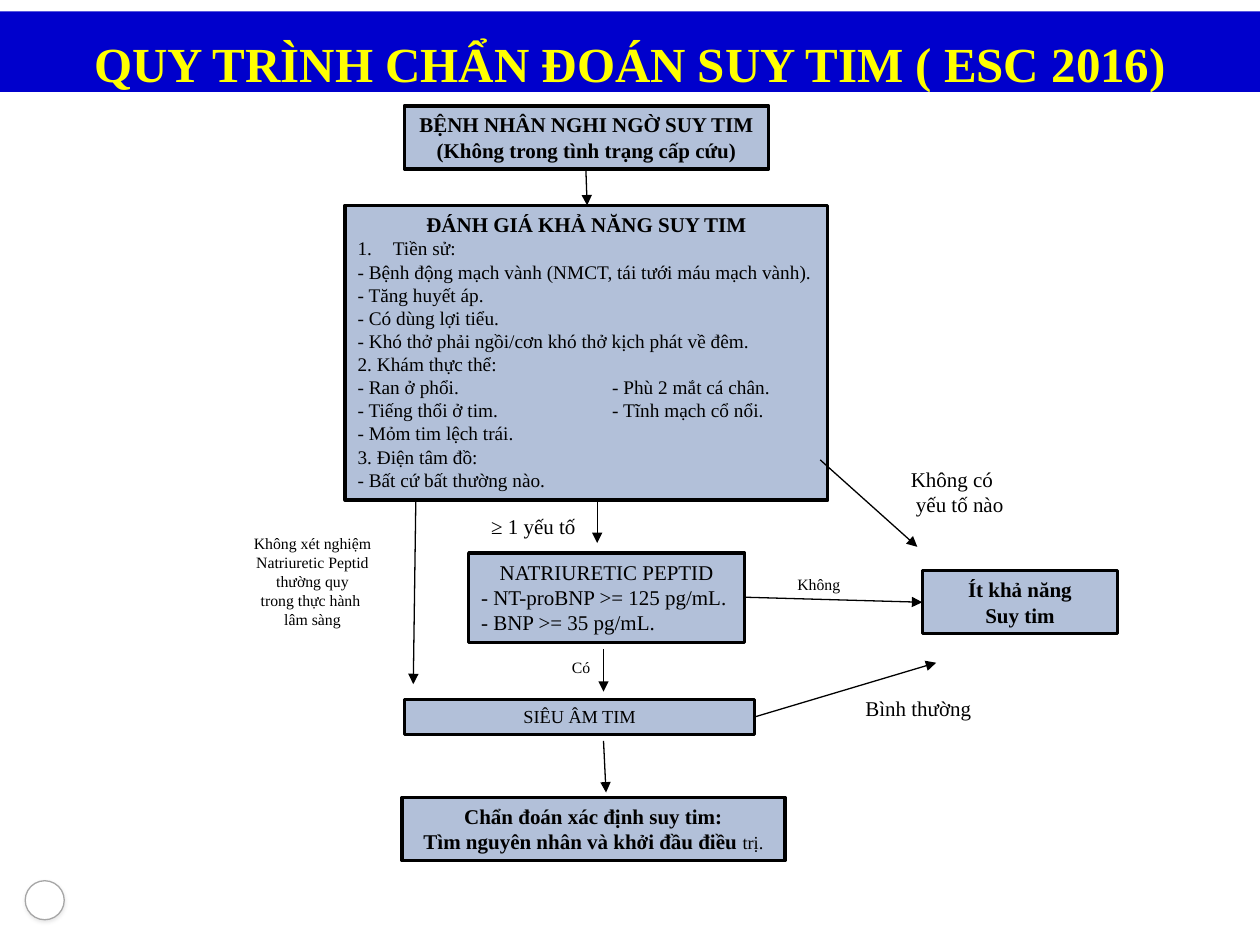
from dataclasses import dataclass

from lxml.etree import SubElement
from pptx import Presentation
from pptx.dml.color import RGBColor
from pptx.enum.shapes import MSO_CONNECTOR, MSO_SHAPE
from pptx.enum.text import MSO_ANCHOR, MSO_AUTO_SIZE, PP_ALIGN
from pptx.oxml.ns import qn
from pptx.util import Inches, Pt


@dataclass(frozen=True)
class Theme:
    font: str = "Times New Roman"
    banner: str = "0000CC"
    title: str = "FFFF00"
    box: str = "B2C0D9"
    ink: str = "000000"
    icon: str = "FFFFFF"
    icon_line: str = "A6A6A6"
    shadow: str = "474749"
    title_size: float = 28
    heading_size: float = 12
    body_size: float = 11
    step_size: float = 10.5
    note_size: float = 9


THEME = Theme()
HEAD, BODY, STEP, NOTE = (THEME.heading_size, THEME.body_size,
                          THEME.step_size, THEME.note_size)

# Content: a line is (text, format); a list of pairs makes several runs
TITLE = "QUY TRÌNH CHẨN ĐOÁN SUY TIM ( ESC 2016)"
BOLD = dict(size=HEAD, bold=True, center=True)
PLAIN = dict(size=HEAD)
DETAIL = dict(size=BODY)
COLUMNS = dict(size=BODY, tab=2.02)
CENTERED_NOTE = dict(size=NOTE, center=True)

# (left, top, width, height), wrap, lines
BOXES = [
    ((3.21, 0.84, 2.89, 0.5), False, [
        ("BỆNH NHÂN NGHI NGỜ SUY TIM", BOLD),
        ("(Không trong tình trạng cấp cứu)", BOLD)]),
    ((2.74, 1.63, 3.83, 2.34), False, [
        ("ĐÁNH GIÁ KHẢ NĂNG SUY TIM", BOLD),
        ("Tiền sử:", dict(size=BODY, numbered=True)),
        ("- Bệnh động mạch vành (NMCT, tái tưới máu mạch vành).", DETAIL),
        ("- Tăng huyết áp.", DETAIL),
        ("- Có dùng lợi tiểu.", DETAIL),
        ("- Khó thở phải ngồi/cơn khó thở kịch phát về đêm.", DETAIL),
        ("2. Khám thực thể:", DETAIL),
        ("- Ran ở phổi.\t- Phù 2 mắt cá chân.", COLUMNS),
        ("- Tiếng thổi ở tim.\t- Tĩnh mạch cổ nổi.", COLUMNS),
        ("- Mỏm tim lệch trái.", DETAIL),
        ("3. Điện tâm đồ:", DETAIL),
        ("- Bất cứ bất thường nào.", DETAIL)]),
    ((3.72, 4.39, 2.19, 0.71), False, [
        ("NATRIURETIC PEPTID", dict(size=HEAD, center=True)),
        ("- NT-proBNP >= 125 pg/mL.", PLAIN),
        ("- BNP >= 35 pg/mL.", PLAIN)]),
    ((3.21, 5.55, 2.78, 0.28), True, [
        ("SIÊU ÂM TIM", dict(size=STEP, center=True))]),
    ((3.19, 6.33, 3.04, 0.5), True, [
        ("Chẩn đoán xác định suy tim:", BOLD),
        ([("Tìm nguyên nhân và khởi đầu điều ", {}),
          ("trị.", dict(size=STEP, bold=False))], BOLD)]),
    ((7.32, 4.53, 1.55, 0.5), True, [("Ít khả năng", BOLD), ("Suy tim", BOLD)]),
]

LABELS = [
    ((1.91, 4.19, 1.14, 0.86), [(text, CENTERED_NOTE) for text in (
        "Không xét nghiệm", "Natriuretic Peptid", "thường quy",
        "trong thực hành ", "lâm sàng")]),
    ((3.8, 4.03, 0.88, 0.3), [("≥ 1 yếu tố", PLAIN)]),
    ((4.44, 5.17, 0.35, 0.25), [("Có", dict(size=NOTE))]),
    ((7.13, 3.65, 0.95, 0.5), [("Không có", PLAIN), (" yếu tố nào", PLAIN)]),
    ((6.23, 4.51, 0.55, 0.25), [("Không", dict(size=NOTE))]),
    ((6.77, 5.47, 1.05, 0.3), [("Bình thường", PLAIN)]),
]

ARROWS = [  # from x, from y, to x, to y
    (4.65, 1.35, 4.66, 1.63),
    (4.74, 3.97, 4.74, 4.31),
    (4.79, 5.15, 4.79, 5.49),
    (4.79, 5.88, 4.81, 6.29),
    (3.3, 3.98, 3.28, 5.43),
    (6.51, 3.65, 7.28, 4.34),
    (5.91, 4.74, 7.32, 4.78),
    (5.99, 5.69, 7.43, 5.26),
]

CIRCLE = (0.2, 6.99, 0.31, 0.31)
HOUSE = [(0.85, 6.97), (1.03, 7.14), (0.97, 7.14), (0.97, 7.29), (0.89, 7.29),
         (0.89, 7.19), (0.82, 7.19), (0.82, 7.29), (0.74, 7.29), (0.74, 7.14),
         (0.68, 7.14)]


def inches(values):
    return [Inches(value) for value in values]


def paint(shape, fill, line=None, width=0.75):
    shape.shadow.inherit = False
    shape.fill.solid()
    shape.fill.fore_color.rgb = RGBColor.from_string(fill)
    if line:
        shape.line.color.rgb = RGBColor.from_string(line)
        shape.line.width = Pt(width)
    else:
        shape.line.fill.background()


def write_line(paragraph, text, size=HEAD, bold=False, center=False,
               color=THEME.ink, numbered=False, tab=None):
    paragraph.alignment = PP_ALIGN.CENTER if center else PP_ALIGN.LEFT
    properties = paragraph._p.get_or_add_pPr()
    if numbered:
        properties.set("marL", str(Inches(0.28)))
        properties.set("indent", str(Inches(-0.28)))
        SubElement(properties, qn("a:buAutoNum"), type="arabicPeriod")
    if tab:
        stops = SubElement(properties, qn("a:tabLst"))
        SubElement(stops, qn("a:tab"), pos=str(Inches(tab)), algn="l")
    for words, changes in [(text, {})] if isinstance(text, str) else text:
        run = paragraph.add_run()
        run.text = words
        run.font.name = THEME.font
        run.font.size = Pt(changes.get("size", size))
        run.font.bold = changes.get("bold", bold)
        run.font.color.rgb = RGBColor.from_string(color)


def write(shape, lines, wrap=False, anchor=MSO_ANCHOR.TOP,
          fit=MSO_AUTO_SIZE.SHAPE_TO_FIT_TEXT):
    frame = shape.text_frame
    frame.word_wrap = wrap
    frame.auto_size = fit
    frame.vertical_anchor = anchor
    for index, (text, style) in enumerate(lines):
        paragraph = frame.add_paragraph() if index else frame.paragraphs[0]
        write_line(paragraph, text, **style)


def add_soft_shadow(shape):
    effects = shape._element.spPr.find(qn("a:effectLst"))
    shadow = SubElement(effects, qn("a:outerShdw"), blurRad=str(Pt(2)),
                        dist=str(Pt(1)), dir="5400000", rotWithShape="0")
    color = SubElement(shadow, qn("a:srgbClr"), val=THEME.shadow)
    SubElement(color, qn("a:alpha"), val="12000")


def add_arrow(shapes, ends):
    arrow = shapes.add_connector(MSO_CONNECTOR.STRAIGHT, *inches(ends))
    arrow.line.color.rgb = RGBColor.from_string(THEME.ink)
    arrow.line.width = Pt(0.75)
    SubElement(arrow.line._get_or_add_ln(), qn("a:tailEnd"), type="triangle")
    SubElement(arrow._element.spPr, qn("a:effectLst"))


def main():
    presentation = Presentation()
    presentation.slide_width, presentation.slide_height = Inches(10), Inches(7.5)
    shapes = presentation.slides.add_slide(presentation.slide_layouts[6]).shapes

    # Navigation icons
    circle = shapes.add_shape(MSO_SHAPE.OVAL, *inches(CIRCLE))
    outline = shapes.build_freeform(*HOUSE[0], scale=Inches(1))
    outline.add_line_segments(HOUSE[1:], close=True)
    for icon in (circle, outline.convert_to_shape()):
        paint(icon, THEME.icon, THEME.icon_line)
        add_soft_shadow(icon)

    # Title banner
    banner = shapes.add_shape(MSO_SHAPE.RECTANGLE, *inches((0, 0.09, 10, 0.64)))
    paint(banner, THEME.banner)
    frame = banner.text_frame
    frame.margin_left = frame.margin_right = frame.margin_top = frame.margin_bottom = 0
    style = dict(size=THEME.title_size, bold=True, center=True, color=THEME.title)
    write(banner, [(TITLE, style)], wrap=True, anchor=MSO_ANCHOR.BOTTOM,
          fit=MSO_AUTO_SIZE.NONE)

    # Flowchart steps, arrows and branch labels
    for place, wrap, lines in BOXES:
        box = shapes.add_shape(MSO_SHAPE.RECTANGLE, *inches(place))
        paint(box, THEME.box, THEME.ink, width=2)
        write(box, lines, wrap)
    for ends in ARROWS:
        add_arrow(shapes, ends)
    for place, lines in LABELS:
        write(shapes.add_textbox(*inches(place)), lines)

    presentation.save("out.pptx")


if __name__ == "__main__":
    main()
